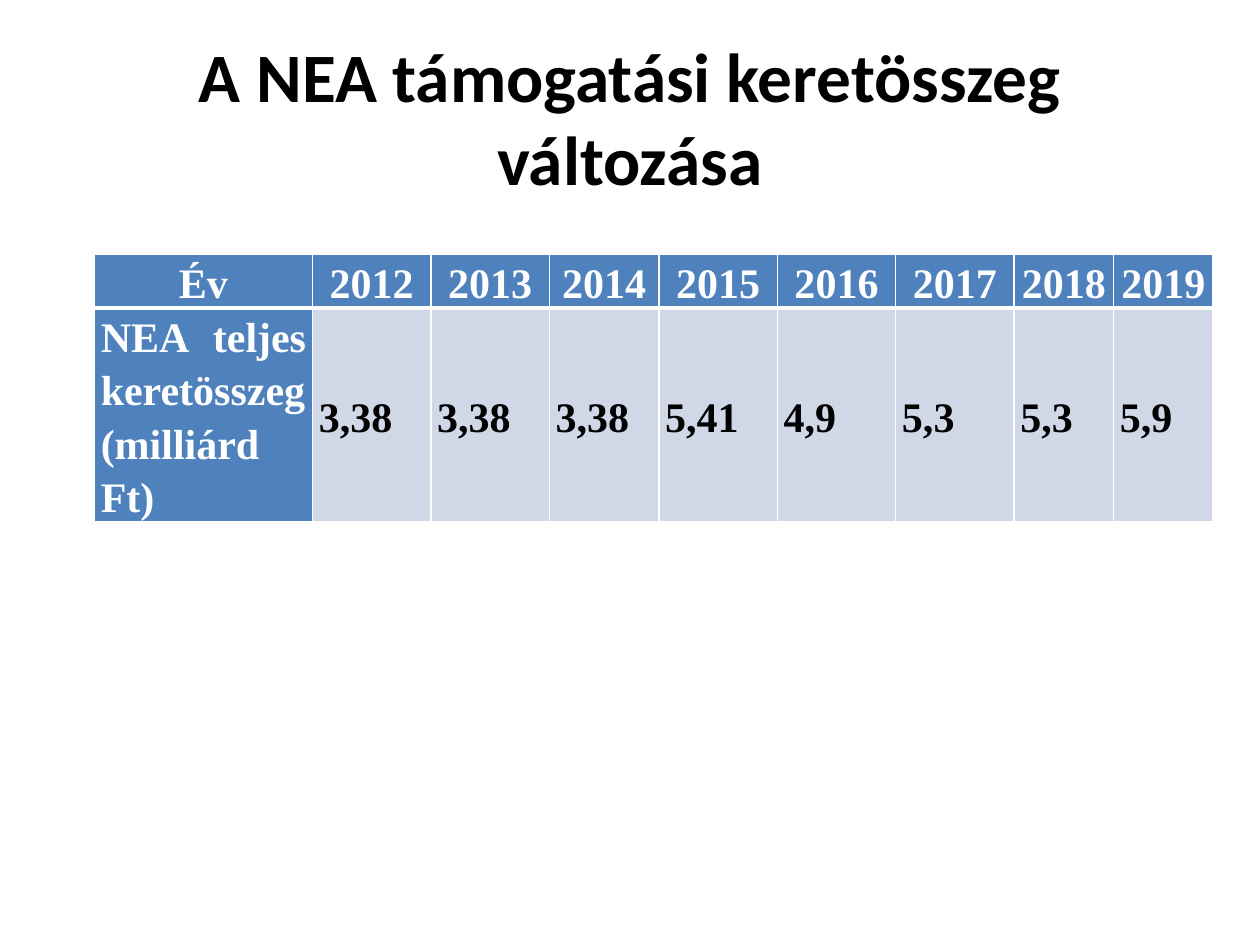
from lxml.etree import SubElement
from pptx import Presentation
from pptx.dml.color import RGBColor
from pptx.enum.text import MSO_ANCHOR, PP_ALIGN
from pptx.oxml.ns import qn
from pptx.util import Inches, Pt

BLACK = RGBColor(0x00, 0x00, 0x00)
WHITE = RGBColor(0xFF, 0xFF, 0xFF)
BLUE = RGBColor(0x4F, 0x81, 0xBD)
PALE = RGBColor(0xD0, 0xD8, 0xE8)

ROWS = [
    ["Év", "2012", "2013", "2014", "2015", "2016", "2017", "2018", "2019"],
    ["NEA teljes keretösszeg (milliárd Ft)",
     "3,38", "3,38", "3,38", "5,41", "4,9", "5,3", "5,3", "5,9"],
]
COL_WIDTHS = [1.73, 0.94, 0.94, 0.87, 0.94, 0.94, 0.94, 0.79, 0.79]
ROW_HEIGHTS = [0.41, 1.28]


def set_font(p, name, size, color):
    """Give a paragraph its bold font."""
    font = p.font
    font.name, font.size, font.bold = name, Pt(size), True
    font.color.rgb = color


def add_title(s, text):
    """Place and format the slide title."""
    sp = s.shapes.title
    sp.left, sp.top, sp.width, sp.height = map(Inches, (0.5, 0.3, 9, 1.25))
    tf = sp.text_frame
    tf.text = text
    tf.vertical_anchor = MSO_ANCHOR.MIDDLE
    p = tf.paragraphs[0]
    p.alignment = PP_ALIGN.CENTER
    set_font(p, "Calibri", 39.6, BLACK)


def set_borders(cell, **widths):
    """Draw white cell borders with the given widths in points."""
    tc_pr = cell._tc.get_or_add_tcPr()
    for side in ("L", "R", "T", "B"):
        ln = SubElement(tc_pr, qn(f"a:ln{side}"), w=str(Pt(widths.get(side, 1))))
        fill = SubElement(ln, qn("a:solidFill"))
        SubElement(fill, qn("a:srgbClr"), val=str(WHITE))


def format_cell(cell, text, is_header, is_label):
    """Fill one table cell with formatted text."""
    set_borders(cell, **({"B": 3} if is_header else {"T": 3}))
    is_blue = is_header or is_label
    cell.fill.solid()
    cell.fill.fore_color.rgb = BLUE if is_blue else PALE
    cell.margin_left = cell.margin_right = Inches(0.05)
    cell.margin_top = cell.margin_bottom = 0
    cell.vertical_anchor = MSO_ANCHOR.MIDDLE
    cell.text = text
    p = cell.text_frame.paragraphs[0]
    p.alignment = PP_ALIGN.CENTER if is_header else PP_ALIGN.JUSTIFY
    p.line_spacing = 1.15
    set_font(p, "Times New Roman", 24, WHITE if is_blue else BLACK)


def add_budget_table(s):
    """Add the table of yearly budgets."""
    table = s.shapes.add_table(
        len(ROWS), len(COL_WIDTHS), Inches(0.75), Inches(2.02),
        Inches(sum(COL_WIDTHS)), Inches(sum(ROW_HEIGHTS))).table
    for column, width in zip(table.columns, COL_WIDTHS):
        column.width = Inches(width)
    for i, (texts, height) in enumerate(zip(ROWS, ROW_HEIGHTS)):
        table.rows[i].height = Inches(height)
        for j, text in enumerate(texts):
            format_cell(table.cell(i, j), text, i == 0, j == 0)


def main():
    """Build and save the slide."""
    prs = Presentation()
    prs.slide_width, prs.slide_height = Inches(10), Inches(7.5)
    s = prs.slides.add_slide(prs.slide_layouts[5])
    add_title(s, "A NEA támogatási keretösszeg változása")
    add_budget_table(s)
    prs.save("out.pptx")


if __name__ == "__main__":
    main()
